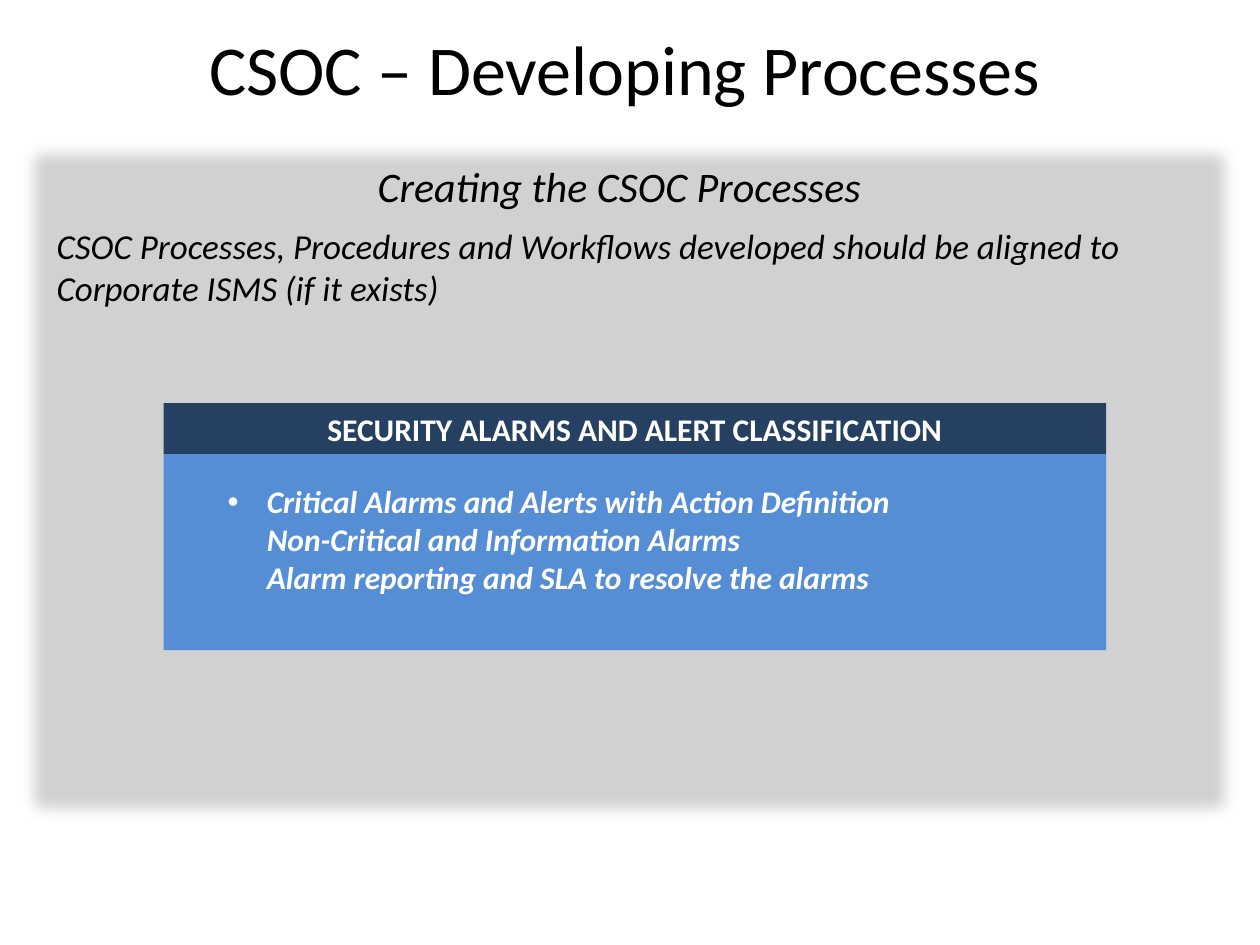
from lxml import etree
from pptx import Presentation
from pptx.dml.color import RGBColor
from pptx.enum.shapes import MSO_SHAPE
from pptx.enum.text import MSO_ANCHOR, PP_ALIGN
from pptx.oxml.ns import qn
from pptx.util import Cm, Pt

RECTANGLE = MSO_SHAPE.RECTANGLE
TOP, MIDDLE = MSO_ANCHOR.TOP, MSO_ANCHOR.MIDDLE
LEFT, CENTER = PP_ALIGN.LEFT, PP_ALIGN.CENTER
TITLE_ONLY = 5

FONT = "Calibri"
BLACK, WHITE = "000000", "FFFFFF"
GREY, BLUE, NAVY = "D1D1D1", "558ED5", "254061"


def color(code):
    return RGBColor.from_string(code)


def add_panel(page, left, top, width, height, fill):
    panel = page.shapes.add_shape(RECTANGLE, Cm(left), Cm(top), Cm(width), Cm(height))
    panel.shadow.inherit = False
    panel.fill.solid()
    panel.fill.fore_color.rgb = color(fill)
    panel.line.fill.background()
    return panel


def soften_edges(shape, radius):
    effects = shape._element.spPr.find(qn("a:effectLst"))
    etree.SubElement(effects, qn("a:softEdge"), rad=str(int(radius)))


def add_text_box(page, left, top, width, height):
    box = page.shapes.add_textbox(Cm(left), Cm(top), Cm(width), Cm(height))
    set_frame(box, TOP)
    return box


def set_frame(box, anchor):
    box.text_frame.word_wrap = True
    box.text_frame.vertical_anchor = anchor


def write(para, text, size, fill=BLACK, bold=False, italic=False, align=LEFT, before=0):
    """Fill a paragraph; a vertical tab in the text is a line break."""
    para.text = text
    para.alignment = align
    para.space_before = Pt(before)
    for span in para.runs:
        span.font.name = FONT
        span.font.size = Pt(size)
        span.font.bold = bold
        span.font.italic = italic
        span.font.color.rgb = color(fill)


def add_bullet(para, indent):
    properties = para._p.get_or_add_pPr()
    properties.set("marL", str(int(indent)))
    properties.set("indent", str(-int(indent)))
    etree.SubElement(properties, qn("a:buFont"), typeface="Arial")
    etree.SubElement(properties, qn("a:buChar"), char="•")


def main():
    deck = Presentation()
    deck.slide_width, deck.slide_height = Cm(25.4), Cm(19.05)
    page = deck.slides.add_slide(deck.slide_layouts[TITLE_ONLY])

    # Title
    title = page.shapes.title
    title.left, title.top, title.width, title.height = Cm(1.09), Cm(0.36), Cm(23.01), Cm(2)
    set_frame(title, MIDDLE)
    write(title.text_frame.paragraphs[0], "CSOC – Developing Processes", 40, align=CENTER)

    # Soft grey background panel
    background = add_panel(page, 0.3, 2.72, 24.8, 14, GREY)
    soften_edges(background, Pt(10))

    # Introduction
    intro = add_text_box(page, 0.89, 3.12, 23.19, 3.3).text_frame
    write(intro.paragraphs[0], "Creating the CSOC Processes", 24, italic=True, align=CENTER)
    write(intro.add_paragraph(),
          "CSOC Processes, Procedures and Workflows developed should be aligned to "
          "Corporate ISMS (if it exists)", 20, italic=True, before=7.3)

    # Classification card: body and header
    card_left, card_top, card_width, header_height = 3.3, 8.13, 19, 1.02
    add_panel(page, card_left, card_top + header_height, card_width, 3.96, BLUE)
    header = add_panel(page, card_left, card_top, card_width, header_height, NAVY)
    set_frame(header, MIDDLE)
    write(header.text_frame.paragraphs[0], "SECURITY ALARMS AND ALERT CLASSIFICATION", 18,
          fill=WHITE, bold=True, align=CENTER)

    # Alarm classes
    classes = add_text_box(page, 4.34, 9.6, 17.35, 3.33).text_frame.paragraphs[0]
    write(classes, "Critical Alarms and Alerts with Action Definition\v"
                   "Non-Critical and Information Alarms\v"
                   "Alarm reporting and SLA to resolve the alarms", 18,
          fill=WHITE, bold=True, italic=True)
    add_bullet(classes, Cm(0.79))

    deck.save("out.pptx")


if __name__ == "__main__":
    main()
